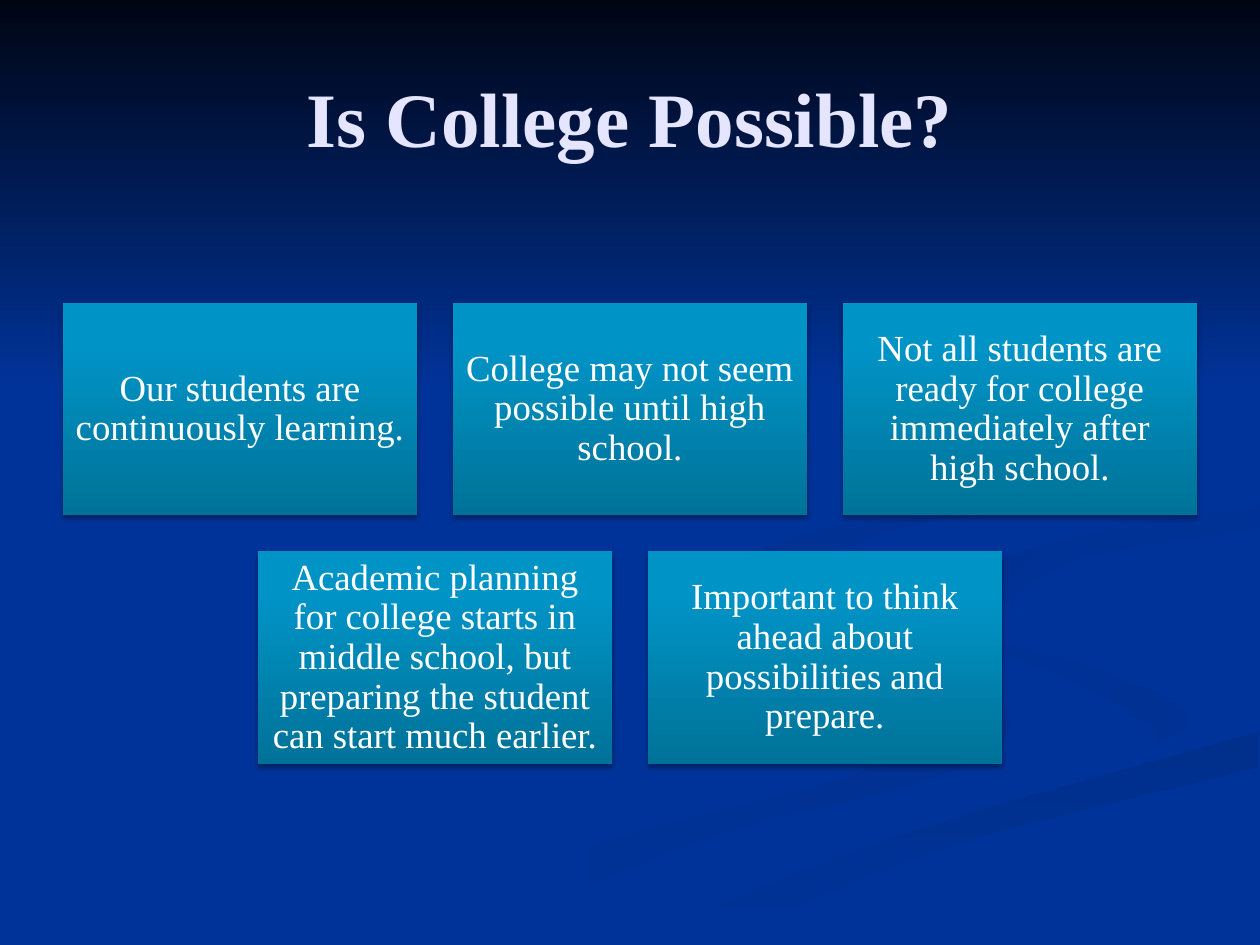
from dataclasses import dataclass

from pptx import Presentation
from pptx.dml.color import RGBColor
from pptx.enum.shapes import MSO_SHAPE as Preset
from pptx.enum.text import MSO_ANCHOR as Anchor, PP_ALIGN as Align
from pptx.oxml.ns import qn
from pptx.util import Cm, Pt
from lxml.etree import SubElement


@dataclass(frozen=True)
class Theme:
    font: str = "Times New Roman"
    background: str = "003399"
    title: str = "E5E5FF"
    card_text: str = "FFFFFF"
    shadow: str = "000000"
    title_size: int = 44
    card_size: int = 21
    # Gradient stops: (percent, colour)
    sky: tuple = ((0, "000514"), (100, "003399"))
    card: tuple = ((0, "007298"), (80, "0094C6"), (100, "0095C7"))


THEME = Theme()

CARDS = [
    ["Our students are continuously learning.",
     "College may not seem possible until high school.",
     "Not all students are ready for college immediately after high school."],
    ["Academic planning for college starts in middle school, but preparing "
     "the student can start much earlier.",
     "Important to think ahead about possibilities and prepare."],
]

# Ribbons on a grid of 0.0254 cm: (start colour, end colour, angle, edges);
# each edge is a smooth curve through its points
GRID = Cm(0.0254)
FOLD = [(503, 749), (630, 693), (764, 647), (999, 581)]
RIBBONS = [
    ("003399", "003193", 0, [
        [(575, 459), (594, 485), (682, 519), (781, 553), (800, 581),
         (740, 618), (564, 665), (361, 749)],
        [(300, 749), (458, 674), (684, 613), (786, 566), (654, 513), (572, 476)]]),
    ("003399", "003193", 45, [
        [(724, 464), (758, 498), (870, 530), (943, 570), (894, 605)],
        [(894, 605), (918, 581), (838, 536), (746, 500), (724, 464)]]),
    ("002F8C", "003399", 90, [
        FOLD, [(999, 609), (752, 672), (571, 749)]]),
    ("003399", "003399", 0, [
        [(477, 749), (663, 668), (869, 611), (943, 570), (870, 530),
         (758, 498), (725, 464), (770, 427), (999, 387)],
        [(999, 402), (835, 430), (782, 460), (848, 503), (999, 538)],
        FOLD[::-1]]),
    ("003091", "003399", 45, [
        [(826, 496), (781, 460), (835, 430), (999, 402)],
        [(999, 420), (859, 443), (805, 476), (826, 496)]]),
    ("002F8E", "003399", 45, [
        [(762, 233), (864, 291), (894, 344), (825, 402), (649, 420),
         (577, 462), (622, 500)],
        [(622, 500), (593, 470), (683, 430), (830, 382), (889, 335),
         (846, 279), (762, 233)]]),
]


def smooth_edge(points, steps=6):
    """Catmull-Rom curve through the points."""
    padded = [points[0], *points, points[-1]]
    curve = []
    for before, start, end, after in zip(padded, padded[1:], padded[2:], padded[3:]):
        for step in range(steps):
            t = step / steps
            curve.append(tuple(
                b + ((c - a) * t + (2 * a - 5 * b + 4 * c - d) * t ** 2
                     + (3 * b - a - 3 * c + d) * t ** 3) / 2
                for a, b, c, d in zip(before, start, end, after)))
    return curve + [points[-1]]


def fill_gradient(shape, stops, angle):
    """Fill without outline; the angle runs clockwise in degrees."""
    shape.line.fill.background()
    shape.fill.gradient()
    shape.fill.gradient_angle = (360 - angle) % 360
    stop_list = shape._element.spPr.find(qn("a:gradFill")).find(qn("a:gsLst"))
    for stop in list(stop_list):
        stop_list.remove(stop)
    for percent, color in stops:
        stop = SubElement(stop_list, qn("a:gs"), pos=str(percent * 1000))
        SubElement(stop, qn("a:srgbClr"), val=color)


def cast_shadow(shape):
    effects = shape._element.spPr.find(qn("a:effectLst"))
    shadow = SubElement(effects, qn("a:outerShdw"), blurRad=str(int(Pt(3.1))),
                        dist=str(int(Pt(1.8))), dir="5400000", rotWithShape="0")
    color = SubElement(shadow, qn("a:srgbClr"), val=THEME.shadow)
    SubElement(color, qn("a:alpha"), val="35000")


def write_text(shape, text, *, size, color, bold=False, inset=None, spacing=None):
    frame = shape.text_frame
    frame.word_wrap = True
    frame.vertical_anchor = Anchor.MIDDLE
    if inset is not None:
        frame.margin_left = frame.margin_right = inset
        frame.margin_top = frame.margin_bottom = inset
    paragraph = frame.paragraphs[0]
    paragraph.text = text
    paragraph.alignment = Align.CENTER
    paragraph.line_spacing = spacing
    font = paragraph.font
    font.name, font.size, font.bold = THEME.font, Pt(size), bold
    font.color.rgb = RGBColor.from_string(color)


def draw_backdrop(slide, left, top, width):
    slide.background.fill.solid()
    slide.background.fill.fore_color.rgb = RGBColor.from_string(THEME.background)
    # Ribbons
    for start, end, angle, edges in RIBBONS:
        outline = [point for edge in edges for point in smooth_edge(edge)]
        builder = slide.shapes.build_freeform(*outline[0], scale=GRID)
        builder.add_line_segments(outline[1:], close=True)
        ribbon = builder.convert_to_shape(left, top)
        ribbon.shadow.inherit = False
        fill_gradient(ribbon, ((0, start), (100, end)), angle)
    # Dark sky
    sky = slide.shapes.add_shape(Preset.RECTANGLE, left, top, width, Cm(7.82))
    sky.shadow.inherit = False
    fill_gradient(sky, THEME.sky, 90)


def place_title(slide, left, top, width, height):
    title = slide.shapes.title
    title.left, title.top, title.width, title.height = left, top, width, height
    write_text(title, "Is College Possible?", size=THEME.title_size,
               color=THEME.title, bold=True)
    # Bring the title in front of the backdrop
    slide.shapes._spTree.append(title._element)


def draw_cards(slide, left, top, width):
    card_width, card_height, gap = Cm(7.14), Cm(4.29), Cm(0.72)
    for row, texts in enumerate(CARDS):
        row_width = len(texts) * (card_width + gap) - gap
        row_left = left + (width - row_width) // 2
        for column, text in enumerate(texts):
            card = slide.shapes.add_shape(
                Preset.RECTANGLE, row_left + column * (card_width + gap),
                top + row * (card_height + gap), card_width, card_height)
            card.shadow.inherit = False
            fill_gradient(card, THEME.card, 270)
            cast_shadow(card)
            write_text(card, text, size=THEME.card_size, color=THEME.card_text,
                       inset=Cm(0.22), spacing=0.9)


def main():
    deck = Presentation()
    deck.slide_width, deck.slide_height = Cm(25.4), Cm(19.05)
    slide = deck.slides.add_slide(deck.slide_layouts[5])
    draw_backdrop(slide, 0, 0, deck.slide_width)
    place_title(slide, Cm(1.27), Cm(0.76), Cm(22.86), Cm(3.18))
    draw_cards(slide, Cm(1.27), Cm(6.1), Cm(22.86))
    deck.save("out.pptx")


if __name__ == "__main__":
    main()
